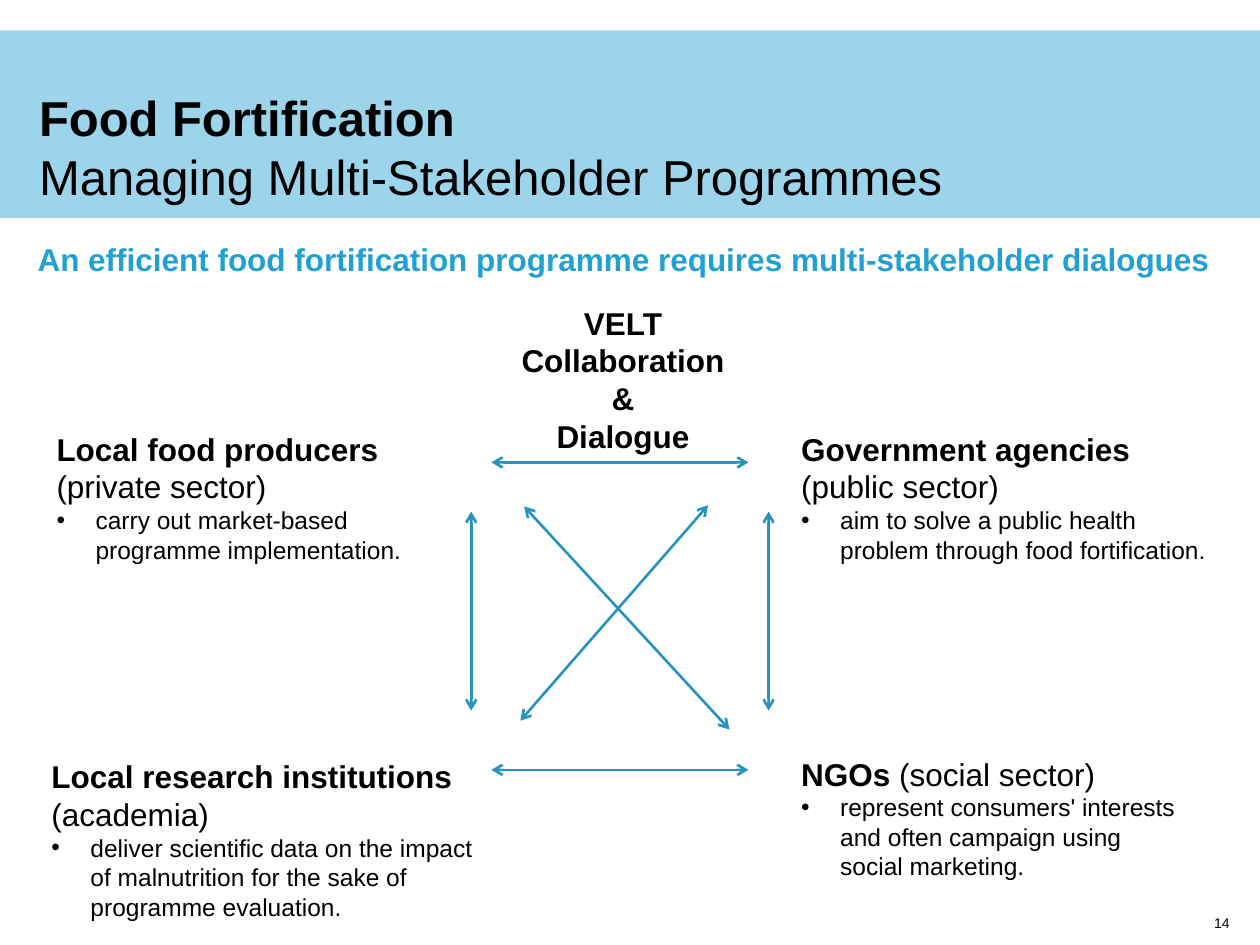
from pptx import Presentation
from pptx.dml.color import RGBColor
from pptx.enum.shapes import MSO_CONNECTOR, MSO_SHAPE
from pptx.enum.text import MSO_ANCHOR, MSO_AUTO_SIZE, PP_ALIGN
from pptx.oxml.ns import qn
from pptx.util import Inches, Pt
from lxml.etree import SubElement

BAND = RGBColor(0x9B, 0xD4, 0xEB)
ACCENT = RGBColor(0x21, 0xA0, 0xD2)
ARROW = RGBColor(0x27, 0x93, 0xBE)
BLACK = RGBColor(0, 0, 0)
FONT = "Arial"

# Grid: text columns and rows, then the sides of the arrow frame
LEFT, RIGHT = 0.35, 6.26
TOP, BOTTOM = 3.36, 5.94
FRAME_LEFT, FRAME_RIGHT = 3.74, 6.1
FRAME_TOP, FRAME_BOTTOM = 3.67, 6.11
GAP_X, GAP_Y = 0.16, 0.43

# Each stakeholder: left, top, width, height, heading lines of (text, bold), task
STAKEHOLDERS = [
    (LEFT, TOP, 2.99, 1.18,
     [[("Local food producers ", True), ("(private sector)", False)]],
     "carry out market-based programme implementation."),
    (RIGHT, TOP, 3.46, 1.18,
     [[("Government agencies", True)], [("(public sector)", False)]],
     "aim to solve a public health problem through food fortification."),
    (LEFT - 0.04, BOTTOM + 0.02, 3.58, 1.41,
     [[("Local research institutions", True)], [("(academia)", False)]],
     "deliver scientific data on the impact of malnutrition "
     "for the sake of programme evaluation."),
    (RIGHT, BOTTOM, 3.23, 1.11,
     [[("NGOs", True), (" (social sector)", False)]],
     "represent consumers' interests and often campaign using social marketing."),
]


def place(shape, left, top, width, height):
    shape.left, shape.top = Inches(left), Inches(top)
    shape.width, shape.height = Inches(width), Inches(height)


def set_font(item, size, bold=False, color=BLACK):
    font = item.font
    font.name, font.size, font.bold = FONT, Pt(size), bold
    font.color.rgb = color


def clear_margins(tf):
    tf.margin_left = tf.margin_right = tf.margin_top = tf.margin_bottom = 0


def add_title(s, heading, subheading):
    title = s.shapes.title
    place(title, 0.31, 0.7, 7.72, 0.93)
    tf = title.text_frame
    tf.text = f"{heading}\v{subheading}"
    tf.word_wrap, tf.auto_size = True, MSO_AUTO_SIZE.NONE
    tf.vertical_anchor = MSO_ANCHOR.BOTTOM
    clear_margins(tf)
    p = tf.paragraphs[0]
    p.alignment = PP_ALIGN.LEFT
    for r, bold in zip(p.runs, (True, False)):
        set_font(r, 28, bold)


def add_band(s):
    band = s.shapes.add_shape(MSO_SHAPE.RECTANGLE, 0, Inches(0.24),
                              Inches(10), Inches(1.49))
    band.shadow.inherit = False
    band.fill.solid()
    band.fill.fore_color.rgb = BAND
    band.line.fill.background()
    s.shapes.title.element.addprevious(band.element)  # behind the title


def add_box(s, left, top, width, height, wrap=True):
    box = s.shapes.add_textbox(Inches(left), Inches(top),
                               Inches(width), Inches(height))
    tf = box.text_frame
    tf.word_wrap, tf.auto_size = wrap, MSO_AUTO_SIZE.SHAPE_TO_FIT_TEXT
    return tf


def add_label(s, at, text, size=18, bold=True, color=BLACK,
              align=PP_ALIGN.LEFT, wrap=True):
    tf = add_box(s, *at, wrap=wrap)
    tf.text = text
    for p in tf.paragraphs:
        p.alignment = align
        for r in p.runs:
            set_font(r, size, bold, color)
    return tf


def add_bullet(p):
    pPr = p._p.get_or_add_pPr()
    pPr.set("marL", str(Inches(0.31)))
    pPr.set("indent", str(-Inches(0.31)))
    SubElement(pPr, qn("a:buFont")).set("typeface", FONT)
    SubElement(pPr, qn("a:buChar")).set("char", "•")


def add_stakeholder(s, left, top, width, height, heading, task):
    tf = add_box(s, left, top, width, height)
    for i, line in enumerate(heading):
        p = tf.add_paragraph() if i else tf.paragraphs[0]
        for text, bold in line:
            r = p.add_run()
            r.text = text
            set_font(r, 18, bold)
    p = tf.add_paragraph()
    p.text = task
    add_bullet(p)
    set_font(p.runs[0], 14)


def add_arrow(s, x1, y1, x2, y2):
    arrow = s.shapes.add_connector(MSO_CONNECTOR.STRAIGHT, Inches(x1), Inches(y1),
                                   Inches(x2), Inches(y2))
    arrow.line.color.rgb, arrow.line.width = ARROW, Pt(1.5)
    ln = arrow.line._get_or_add_ln()
    for end in ("a:headEnd", "a:tailEnd"):
        SubElement(ln, qn(end)).set("type", "arrow")
    SubElement(arrow._element.spPr, qn("a:effectLst"))


def main():
    prs = Presentation()
    prs.slide_width, prs.slide_height = Inches(10), Inches(7.5)
    s = prs.slides.add_slide(prs.slide_layouts[5])

    # Header, key message and page number
    add_title(s, "Food Fortification", "Managing Multi-Stakeholder Programmes")
    add_band(s)
    add_label(s, (0.2, 1.86, 9.66, 0.4), "An efficient food fortification "
              "programme requires multi-stakeholder dialogues", color=ACCENT)
    number = add_label(s, (8.97, 7.26, 0.79, 0.24), "14", 8, False,
                       align=PP_ALIGN.RIGHT)
    number.auto_size = MSO_AUTO_SIZE.NONE
    clear_margins(number)

    # Four stakeholders around the centre
    for stakeholder in STAKEHOLDERS:
        add_stakeholder(s, *stakeholder)
    add_label(s, (4.03, 2.36, 1.83, 1.31), "VELT\nCollaboration\n&\nDialogue",
              align=PP_ALIGN.CENTER, wrap=False)

    # Sides of the frame, then the diagonals
    for y in (FRAME_BOTTOM, FRAME_TOP):
        add_arrow(s, FRAME_RIGHT - GAP_X, y, FRAME_LEFT + GAP_X, y)
    for x in (FRAME_LEFT, FRAME_RIGHT):
        add_arrow(s, x, FRAME_BOTTOM - GAP_Y - 0.04, x, FRAME_TOP + GAP_Y - 0.04)
    add_arrow(s, 4.13, 5.72, 5.62, 4.01)
    add_arrow(s, 4.16, 4.02, 5.79, 5.79)

    prs.save("out.pptx")


if __name__ == "__main__":
    main()
